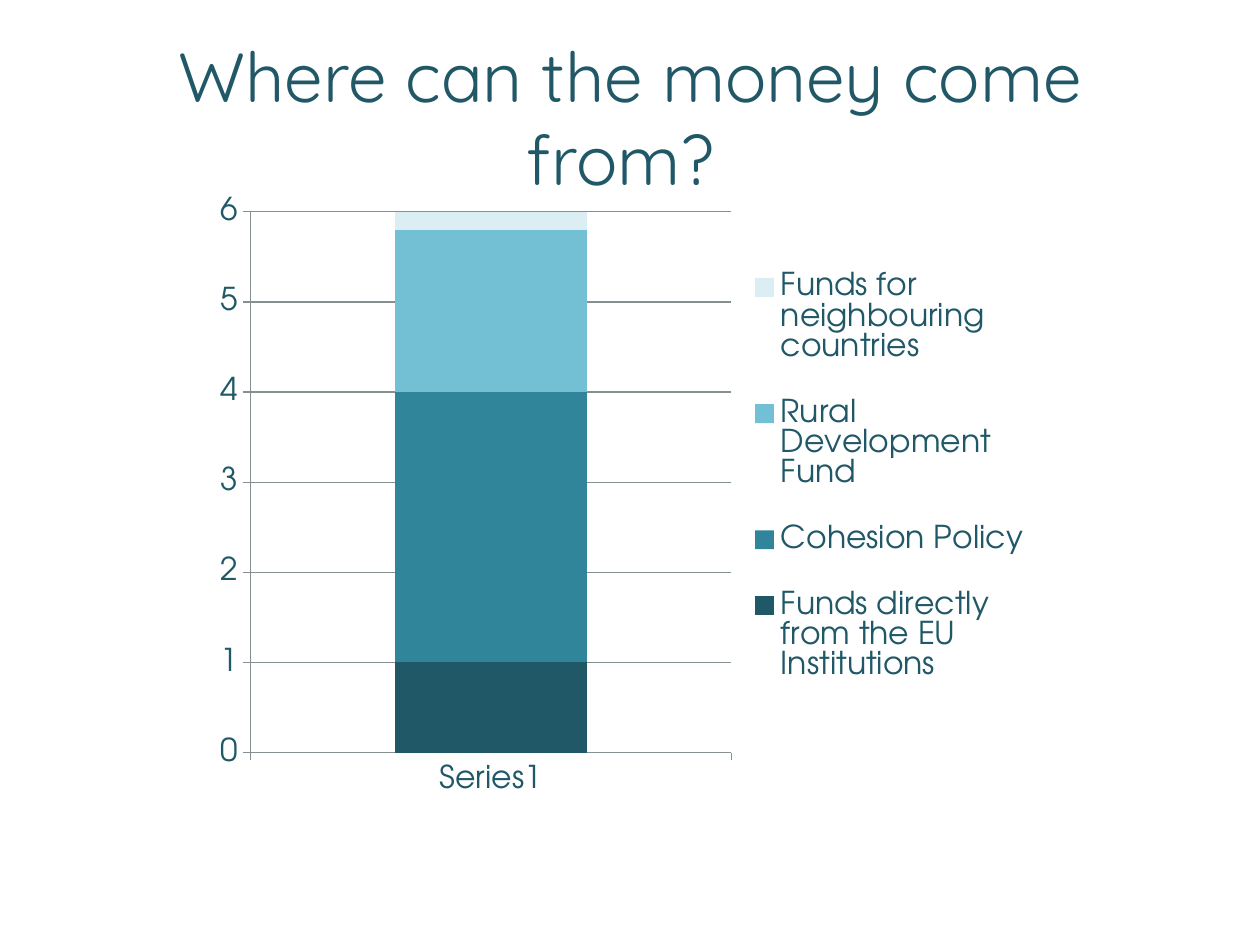
from lxml import etree
from pptx import Presentation, util as u
from pptx.chart.data import CategoryChartData
from pptx.dml.color import RGBColor
from pptx.enum import chart as ch, text
from pptx.oxml import parse_xml
from pptx.oxml.ns import nsdecls, qn

PX = 914400 // 126
INK, GRID = "205867", "868F92"
HEAD = "Where can the money come from? "
CATS = ["Series1"]
FUNDS = [
    ("Funds directly from the EU Institutions", 1, "205867"),
    ("Cohesion Policy", 3, "31859B"),
    ("Rural Development Fund", 1.8, "73BFD3"),
    ("Funds for neighbouring countries", 0.2, "DBEEF3"),
]
TITLE = (63, 38, 1134, 157)
CHART = (203, 185, 843, 624)
PLOT = (250, 212, 481, 541)
KEY = (750, 237, 278, 480)


def emu(box):
    return [n * PX for n in box]


def rgb(code):
    return RGBColor.from_string(code)


def style(font, name, size):
    font.name, font.size = name, u.Pt(size)
    font.color.rgb = rgb(INK)


def layout(box, inner=False):
    """Manual chart layout: a px box as fractions of the chart."""
    left, top, wide, high = CHART
    part = {"x": (box[0] - left) / wide, "y": (box[1] - top) / high,
            "w": box[2] / wide, "h": box[3] / high}
    root = parse_xml(f"<c:layout {nsdecls('c')}><c:manualLayout/></c:layout>")
    rows = [("layoutTarget", "inner")] if inner else []
    rows += [("xMode", "edge"), ("yMode", "edge")]
    rows += [(key, f"{val:.3f}") for key, val in part.items()]
    for tag, val in rows:
        etree.SubElement(root[0], qn("c:" + tag)).set("val", val)
    return root


def place(node, new, after=None):
    for old in node.findall(qn("c:layout")):
        node.remove(old)
    if after is None:
        node.insert(0, new)
    else:
        node.find(qn(after)).addnext(new)


prs = Presentation()
prs.slide_width, prs.slide_height = emu((1260, 945))
slide = prs.slides.add_slide(prs.slide_layouts[6])

# Stacked column chart
data = CategoryChartData()
data.categories = CATS
for name, val, _ in FUNDS:
    data.add_series(name, [val])
chart = slide.shapes.add_chart(
    ch.XL_CHART_TYPE.COLUMN_STACKED, *emu(CHART), data).chart
style(chart.font, "TeX Gyre Adventor", 18)
chart.has_title = False
plot = chart.plots[0]
plot.gap_width, plot.overlap, plot.vary_by_categories = 150, 100, False
for ser, (_, _, code) in zip(plot.series, FUNDS):
    ser.format.fill.solid()
    ser.format.fill.fore_color.rgb = rgb(code)

# Axes and gridlines
vals = chart.value_axis
vals.minimum_scale, vals.maximum_scale, vals.major_unit = 0, 6, 1
vals.has_major_gridlines = True
for axis in (vals, chart.category_axis):
    axis.major_tick_mark = ch.XL_TICK_MARK.OUTSIDE
for part in (vals, chart.category_axis, vals.major_gridlines):
    part.format.line.color.rgb = rgb(GRID)
    part.format.line.width = u.Pt(0.75)

# Legend
chart.has_legend = True
key = chart.legend
key.position = ch.XL_LEGEND_POSITION.RIGHT
key.include_in_layout = False
area = chart.element.find(".//" + qn("c:plotArea"))
legend = chart.element.find(".//" + qn("c:legend"))
place(area, layout(PLOT, inner=True))
place(legend, layout(KEY), "c:legendPos")

# Title
frame = slide.shapes.add_textbox(*emu(TITLE)).text_frame
frame.word_wrap = True
frame.vertical_anchor = text.MSO_ANCHOR.MIDDLE
frame.text = HEAD
line = frame.paragraphs[0]
line.alignment = text.PP_ALIGN.CENTER
style(line.runs[0].font, "Quicksand", 39.6)

prs.save("out.pptx")
